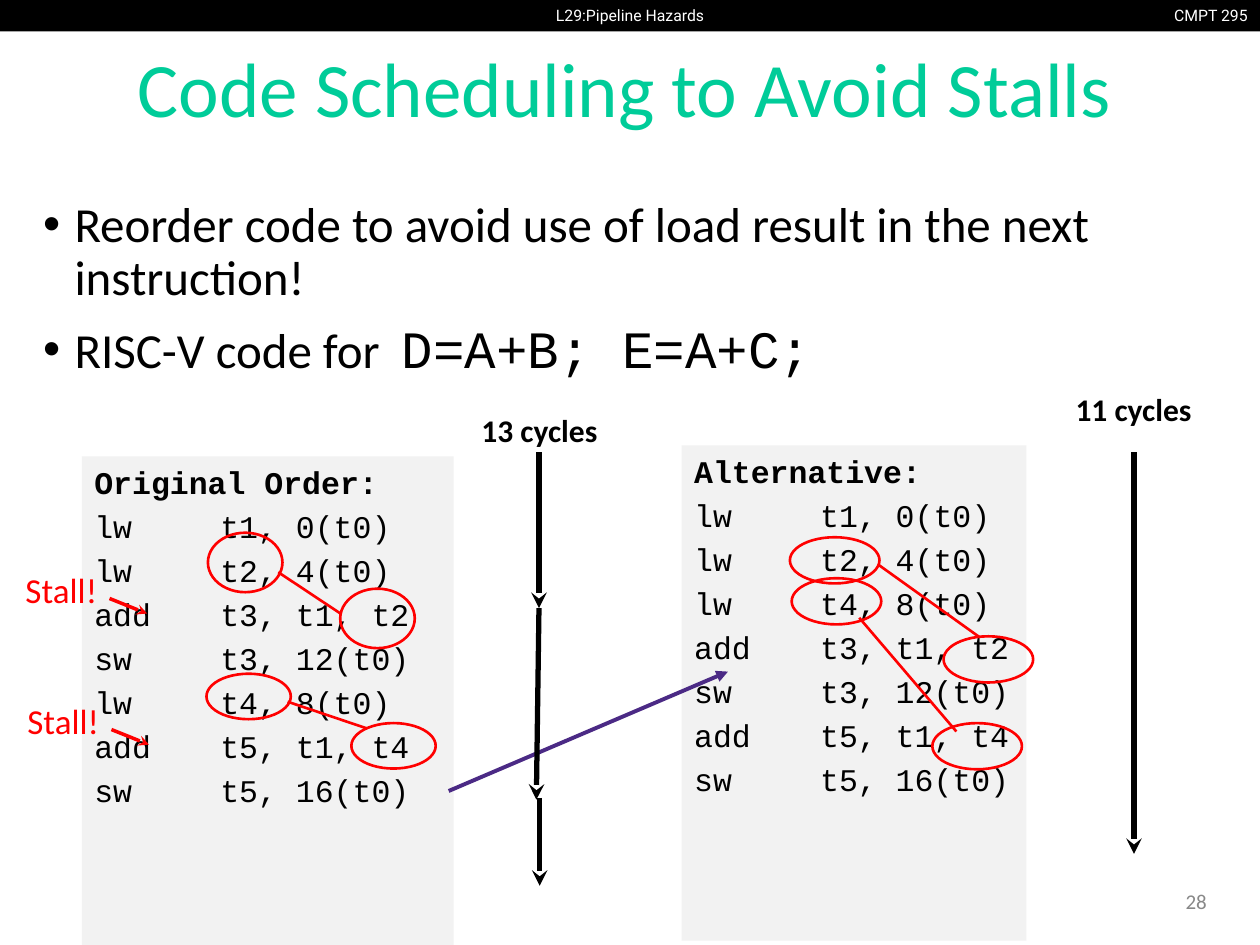
from dataclasses import dataclass
from typing import NamedTuple

from lxml.etree import SubElement
from pptx import Presentation
from pptx.dml.color import RGBColor
from pptx.enum.shapes import MSO_CONNECTOR as Connector, MSO_SHAPE as Shape
from pptx.enum.text import MSO_ANCHOR as Anchor, PP_ALIGN as Align
from pptx.oxml.ns import qn
from pptx.util import Pt


@dataclass(frozen=True)
class Theme:
    black: str = "000000"
    white: str = "FFFFFF"
    title: str = "00CC99"
    panel: str = "F2F2F2"
    mark: str = "FF0000"
    move: str = "4B2A85"
    number: str = "888888"
    sans: str = "Calibri"
    mono: str = "Courier New"
    header: str = "Roboto"
    header_size: float = 9
    number_size: float = 12
    code_size: float = 18
    stall_size: float = 20
    gap_size: float = 21
    body_size: float = 28
    formula_size: float = 30
    title_size: float = 44


class Box(NamedTuple):
    left: float
    top: float
    width: float
    height: float


class Line(NamedTuple):
    x1: float
    y1: float
    x2: float
    y2: float


class Label(NamedTuple):
    text: str
    box: Box
    size: float
    color: str
    align: Align = Align.LEFT
    font: str = "Calibri"
    bold: bool = False
    anchor: Anchor = Anchor.TOP
    wrap: bool = True
    spacing: float = 1.0


class Listing(NamedTuple):
    heading: str
    box: Box
    code: list[str]


class Dependency(NamedTuple):
    source: Box
    target: Box
    link: Line


THEME = Theme()

HEADERS = [
    Label("CMPT 295", Box(661.7, 0, 58.3, 18), THEME.header_size, THEME.white,
          Align.RIGHT, THEME.header, wrap=False),
    Label("L29:Pipeline Hazards", Box(298.5, 0, 123, 18), THEME.header_size, THEME.white,
          Align.CENTER, THEME.header, wrap=False),
]
TITLE = Label("Code Scheduling to Avoid Stalls", Box(17, 11.5, 680, 83), THEME.title_size,
              THEME.title, Align.CENTER, anchor=Anchor.MIDDLE, spacing=0.9)
NUMBER = Label("28", Box(534.7, 500.5, 162, 29), THEME.number_size, THEME.number,
               Align.RIGHT, anchor=Anchor.MIDDLE)
BODY = Box(17.5, 110.8, 680, 376)
CODE_TAB = 72

LISTINGS = [
    Listing("Original Order:", Box(46.8, 260.8, 212.4, 283),
            ["lw\tt1, 0(t0)", "lw\tt2, 4(t0)", "add\tt3, t1, t2", "sw\tt3, 12(t0)",
             "lw\tt4, 8(t0)", "add\tt5, t1, t4", "sw\tt5, 16(t0)"]),
    Listing("Alternative:", Box(389.6, 254.5, 197, 283),
            ["lw\tt1, 0(t0)", "lw\tt2, 4(t0)", "lw\tt4, 8(t0)", "add\tt3, t1, t2",
             "sw\tt3, 12(t0)", "add\tt5, t1, t4", "sw\tt5, 16(t0)"]),
]
MOVE = Line(256.4, 452, 416, 383.8)
DEPENDENCIES = [
    Dependency(Box(118.8, 304.4, 42.6, 34), Box(194.4, 336.4, 42.6, 34),
               Line(159, 327, 194.4, 350.5)),
    Dependency(Box(118, 385, 48.2, 26), Box(200.8, 413.2, 48.2, 26),
               Line(164.4, 401, 209.5, 416.2)),
    Dependency(Box(451.4, 307, 51.2, 26.4), Box(539.2, 363.6, 51.2, 26.4),
               Line(501.8, 322.6, 560, 364.3)),
    Dependency(Box(452.4, 330.4, 51.2, 26.4), Box(532.8, 413.2, 51.2, 26.4),
               Line(491, 353, 546.5, 418)),
]
STALLS = [(3.6, 321.2), (4.7, 396.1)]
CYCLES = [("13 cycles", 268, 231.4), ("11 cycles", 607.5, 219.2)]
SPANS = [
    Line(308, 258.5, 308, 347.5),
    Line(308, 347.5, 306.5, 457),
    Line(308.4, 456, 308.4, 506.2),
    Line(648, 258.5, 648, 488),
]


def style(font, name: str, size: float, color: str, bold: bool = False) -> None:
    font.name, font.size, font.bold = name, Pt(size), bold
    font.color.rgb = RGBColor.from_string(color)


def draw_shape(slide, kind: Shape, box: Box, fill: str = "", outline: str = ""):
    shape = slide.shapes.add_shape(kind, *map(Pt, box))
    shape.shadow.inherit = False
    if fill:
        shape.fill.solid()
        shape.fill.fore_color.rgb = RGBColor.from_string(fill)
    else:
        shape.fill.background()
    if outline:
        shape.line.color.rgb = RGBColor.from_string(outline)
        shape.line.width = Pt(1.5)
    else:
        shape.line.fill.background()
    return shape


def draw_line(slide, line: Line, color: str, width: float, head: str = "") -> None:
    connector = slide.shapes.add_connector(Connector.STRAIGHT, *map(Pt, line))
    connector.line.color.rgb = RGBColor.from_string(color)
    connector.line.width = Pt(width)
    if head:
        SubElement(connector.line._get_or_add_ln(), qn("a:tailEnd"), type=head)
    SubElement(connector._element.spPr, qn("a:effectLst"))


def draw_label(slide, label: Label) -> None:
    frame = slide.shapes.add_textbox(*map(Pt, label.box)).text_frame
    frame.word_wrap = label.wrap
    frame.vertical_anchor = label.anchor
    paragraph = frame.paragraphs[0]
    paragraph.text = label.text
    paragraph.alignment = label.align
    paragraph.line_spacing = label.spacing
    style(paragraph.font, label.font, label.size, label.color, label.bold)


def draw_body(slide) -> None:
    frame = slide.shapes.add_textbox(*map(Pt, BODY)).text_frame
    frame.word_wrap = True
    texts = ["Reorder code to avoid use of load result in the next instruction!",
             "RISC-V code for"]
    for index, text in enumerate(texts):
        paragraph = frame.paragraphs[0] if index == 0 else frame.add_paragraph()
        paragraph.line_spacing = 0.9
        paragraph.space_before = Pt(10 * index)
        properties = paragraph._p.get_or_add_pPr()
        properties.set("marL", str(Pt(18)))
        properties.set("indent", str(Pt(-18)))
        SubElement(properties, qn("a:buFont"), typeface="Arial")
        SubElement(properties, qn("a:buChar"), char="•")
        paragraph.add_run().text = text
        style(paragraph.font, THEME.sans, THEME.body_size, THEME.black)
    for text, size in ((" ", THEME.gap_size), ("D=A+B; E=A+C;", THEME.formula_size)):
        run = paragraph.add_run()
        run.text = text
        style(run.font, THEME.mono, size, THEME.black)


def draw_listing(slide, listing: Listing) -> None:
    frame = draw_shape(slide, Shape.RECTANGLE, listing.box, THEME.panel).text_frame
    frame.word_wrap = True
    frame.vertical_anchor = Anchor.TOP
    for index, text in enumerate([listing.heading, *listing.code]):
        paragraph = frame.paragraphs[0] if index == 0 else frame.add_paragraph()
        paragraph.text = text
        paragraph.alignment = Align.LEFT
        paragraph.space_before = Pt(3.6 if index else 0)
        tabs = SubElement(paragraph._p.get_or_add_pPr(), qn("a:tabLst"))
        SubElement(tabs, qn("a:tab"), pos=str(Pt(CODE_TAB)), algn="l")
        style(paragraph.font, THEME.mono, THEME.code_size, THEME.black, index == 0)


def draw_dependency(slide, dependency: Dependency) -> None:
    for box in (dependency.source, dependency.target):
        draw_shape(slide, Shape.OVAL, box, outline=THEME.mark)
    draw_line(slide, dependency.link, THEME.mark, 1.5)


def draw_stall(slide, left: float, top: float) -> None:
    draw_label(slide, Label("Stall!", Box(left, top, 59, 41.8), THEME.stall_size,
                            THEME.mark, Align.RIGHT))
    draw_line(slide, Line(left + 59, top + 20.8, left + 80.4, top + 29.4),
              THEME.mark, 2, "stealth")


def main() -> None:
    presentation = Presentation()
    presentation.slide_width, presentation.slide_height = Pt(720), Pt(540)
    slide = presentation.slides.add_slide(presentation.slide_layouts[6])
    draw_shape(slide, Shape.RECTANGLE, Box(0, 0, 720, 18), THEME.black)
    for label in [*HEADERS, TITLE, NUMBER]:
        draw_label(slide, label)
    draw_body(slide)
    for listing in LISTINGS:
        draw_listing(slide, listing)
    draw_line(slide, MOVE, THEME.move, 2.25, "triangle")
    for dependency in DEPENDENCIES:
        draw_dependency(slide, dependency)
    for left, top in STALLS:
        draw_stall(slide, left, top)
    for span in SPANS:
        draw_line(slide, span, THEME.black, 3, "stealth")
    for text, left, top in CYCLES:
        draw_label(slide, Label(text, Box(left, top, 82, 39), THEME.code_size,
                                THEME.black, bold=True))
    presentation.save("out.pptx")


if __name__ == "__main__":
    main()
